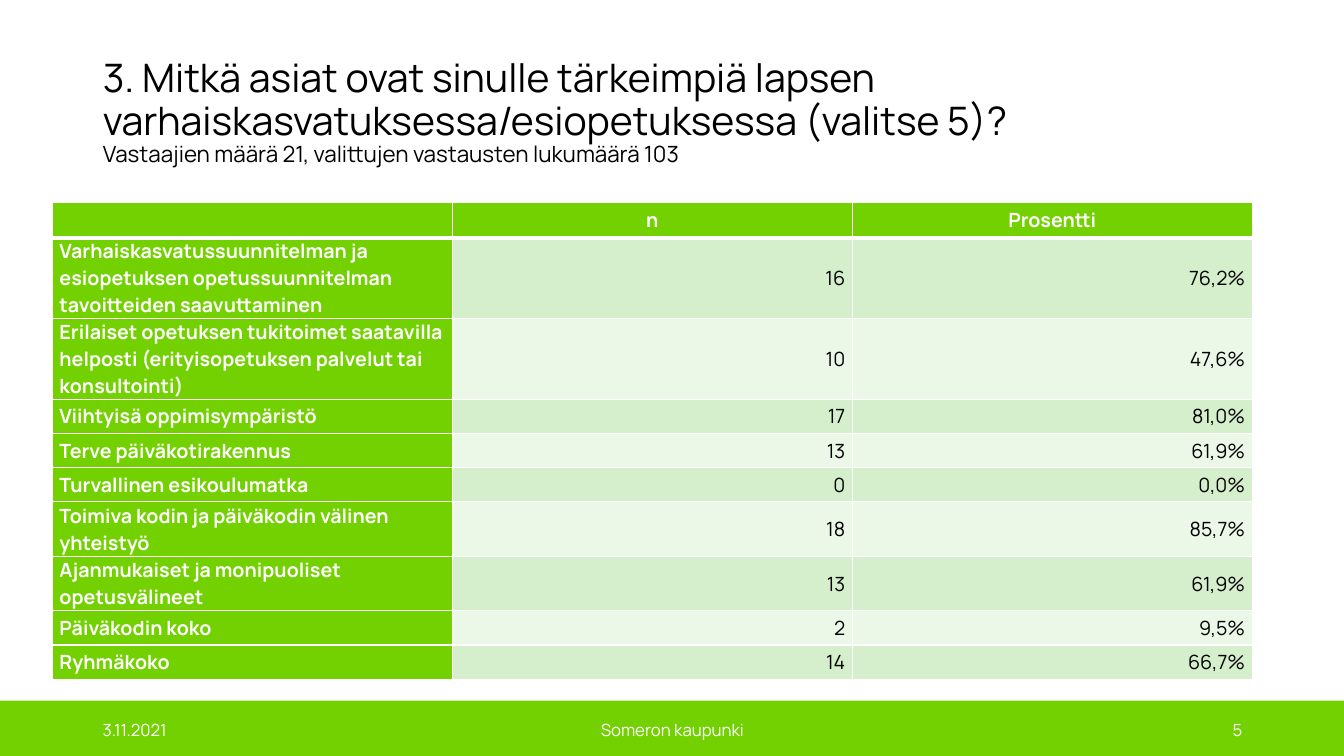
from lxml import etree
from pptx import Presentation, util as u
from pptx.dml import color
from pptx.enum import shapes, text
from pptx.oxml import ns

LEFT, MID, RIGHT = text.PP_ALIGN.LEFT, text.PP_ALIGN.CENTER, text.PP_ALIGN.RIGHT
GREEN, WHITE, BLACK = "73D101", "FFFFFF", "000000"
BANDS = ["D5EECC", "EBF7E7"]

ROWS = [
    ("", "n", "Prosentti"),
    ("Varhaiskasvatussuunnitelman ja esiopetuksen opetussuunnitelman "
     "tavoitteiden saavuttaminen", "16", "76,2%"),
    ("Erilaiset opetuksen tukitoimet saatavilla helposti "
     "(erityisopetuksen palvelut tai konsultointi)", "10", "47,6%"),
    ("Viihtyisä oppimisympäristö", "17", "81,0%"),
    ("Terve päiväkotirakennus", "13", "61,9%"),
    ("Turvallinen esikoulumatka", "0", "0,0%"),
    ("Toimiva kodin ja päiväkodin välinen yhteistyö", "18", "85,7%"),
    ("Ajanmukaiset ja monipuoliset opetusvälineet", "13", "61,9%"),
    ("Päiväkodin koko", "2", "9,5%"),
    ("Ryhmäkoko", "14", "66,7%"),
]
HIGHS = [0.35] + [0.8] * 2 + [0.34] * 3 + [0.54] * 2 + [0.34] * 2


def paint(code):
    return color.RGBColor.from_string(code)


class Deck:
    """Holds the style and the current slide, and adds each kind of element."""

    def __init__(self, font):
        self.font = font
        self.prs = Presentation()
        self.prs.slide_width, self.prs.slide_height = u.Inches(13.33), u.Inches(7.5)
        self.slide = self.prs.slides.add_slide(self.prs.slide_layouts[5])

    def style(self, font, size, ink, bold=False):
        font.name, font.size, font.bold = self.font, u.Pt(size), bold
        font.color.rgb = paint(ink)

    def run(self, para, words, size, ink, bold=False):
        run = para.add_run()
        run.text = words
        self.style(run.font, size, ink, bold)

    def title(self, box, head, sub):
        shape = self.slide.shapes.title
        shape.left, shape.top, shape.width, shape.height = map(u.Inches, box)
        frame = shape.text_frame
        frame.word_wrap = True
        frame.auto_size = text.MSO_AUTO_SIZE.NONE
        frame.vertical_anchor = text.MSO_ANCHOR.MIDDLE
        para = frame.paragraphs[0]
        para.alignment, para.line_spacing = LEFT, 0.9
        self.run(para, head, 28, BLACK)
        para.add_line_break()
        self.run(para, sub, 16, BLACK)

    def band(self, box, fill):
        rect = self.slide.shapes.add_shape(shapes.MSO_SHAPE.RECTANGLE, *map(u.Inches, box))
        rect.shadow.inherit = False
        rect.fill.solid()
        rect.fill.fore_color.rgb = paint(fill)
        rect.line.fill.background()

    def label(self, box, words, align):
        frame = self.slide.shapes.add_textbox(*map(u.Inches, box)).text_frame
        frame.word_wrap = True
        frame.vertical_anchor = text.MSO_ANCHOR.MIDDLE
        para = frame.paragraphs[0]
        para.alignment = align
        self.run(para, words, 12, WHITE)

    def edge(self, cell, side, width):
        props = cell._tc.get_or_add_tcPr()
        line = etree.SubElement(props, ns.qn("a:ln" + side), w=str(u.Pt(width)))
        fill = etree.SubElement(line, ns.qn("a:solidFill"))
        etree.SubElement(fill, ns.qn("a:srgbClr"), val=WHITE)

    def cell(self, cell, words, row, col):
        for side in "LRTB":
            thick = (row, side) in [(0, "B"), (1, "T")]
            self.edge(cell, side, 3 if thick else 1)
        head = row == 0 or col == 0
        cell.fill.solid()
        cell.fill.fore_color.rgb = paint(GREEN if head else BANDS[(row - 1) % 2])
        cell.margin_left = cell.margin_right = u.Inches(0.07)
        cell.margin_top = cell.margin_bottom = 0
        cell.vertical_anchor = text.MSO_ANCHOR.MIDDLE
        para = cell.text_frame.paragraphs[0]
        para.alignment = MID if row == 0 else RIGHT if col else LEFT
        ink = WHITE if head else BLACK
        if words:
            self.run(para, words, 14, ink, head)
        else:
            self.style(para.font, 14, ink, head)

    def table(self, box, rows, highs):
        grid = self.slide.shapes.add_table(
            len(rows), len(rows[0]), *map(u.Inches, box)).table
        for r, (row, high) in enumerate(zip(rows, highs)):
            grid.rows[r].height = u.Inches(high)
            for c, words in enumerate(row):
                self.cell(grid.cell(r, c), words, r, c)


def main():
    deck = Deck("Manrope")
    deck.band((0, 6.95, 13.33, 0.55), GREEN)
    deck.label((0.92, 7.04, 3, 0.4), "3.11.2021", LEFT)
    deck.label((4.42, 7.04, 4.5, 0.4), "Someron kaupunki", MID)
    deck.label((9.42, 7.04, 3, 0.4), "5", RIGHT)
    deck.title((0.92, 0.4, 9.9, 1.45),
               "3. Mitkä asiat ovat sinulle tärkeimpiä lapsen "
               "varhaiskasvatuksessa/esiopetuksessa (valitse 5)?",
               "Vastaajien määrä 21, valittujen vastausten lukumäärä 103")
    deck.table((0.52, 2.01, 11.9, sum(HIGHS)), ROWS, HIGHS)
    deck.prs.save("out.pptx")


if __name__ == "__main__":
    main()
